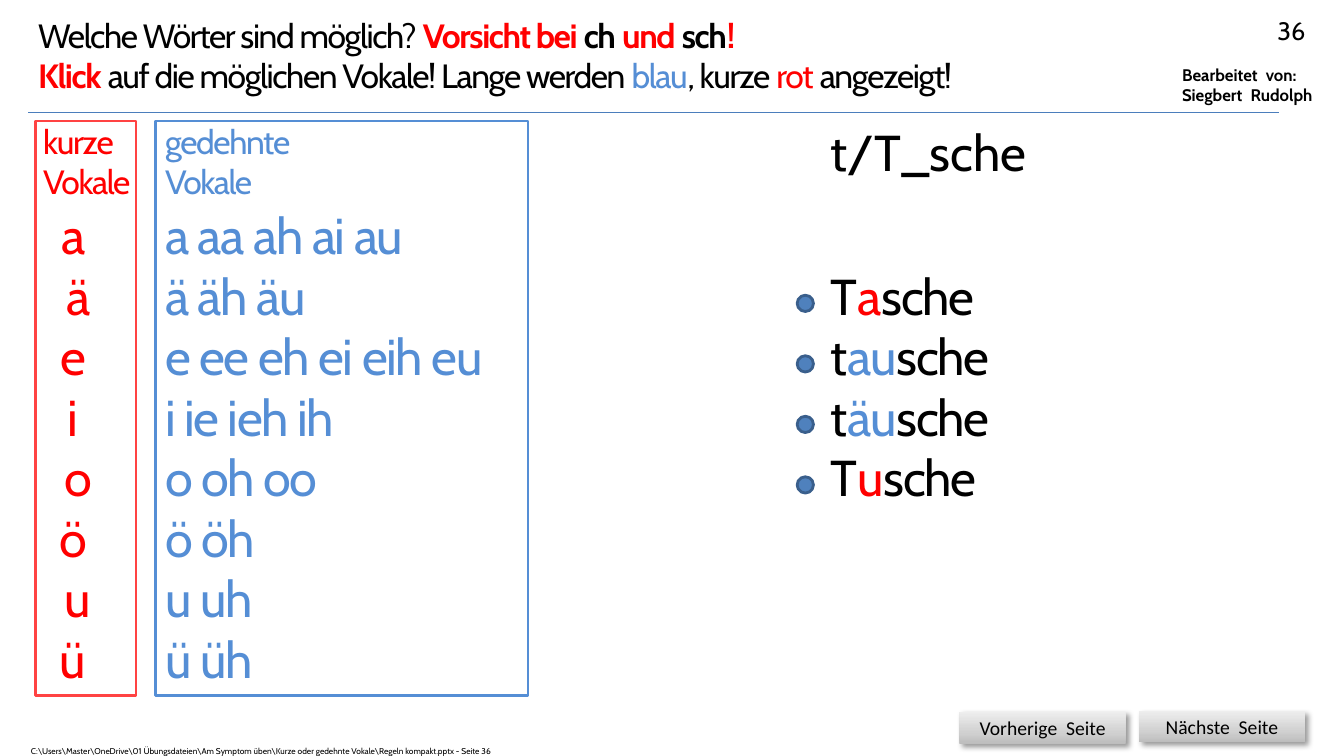
import lxml.etree
import pptx
import pptx.dml.color
import pptx.enum.shapes
import pptx.enum.text
import pptx.oxml.ns
import pptx.util

Cm = pptx.util.Cm
Pt = pptx.util.Pt
Align = pptx.enum.text.PP_ALIGN
Shape = pptx.enum.shapes.MSO_SHAPE

BLACK = "000000"
RED = "FF0000"
BLUE = "558ED5"
WIDE_SPACE = 3


def color(value):
    return pptx.dml.color.RGBColor.from_string(value)


def add_element(parent, tag, **attributes):
    element = lxml.etree.SubElement(parent, pptx.oxml.ns.qn(tag))
    for name, value in attributes.items():
        element.set(name, str(value))
    return element


def fill_paragraph(para, spans, size, align=Align.LEFT, tight=0, font="Cabin"):
    para.alignment = align
    for text, tint, bold, *spacing in spans:
        span = para.add_run()
        span.text = text
        span.font.name = font
        span.font.size = Pt(size)
        span.font.bold = bold
        span.font.color.rgb = color(tint)
        gap = spacing[0] if spacing else tight
        if gap:
            span.font._element.set("spc", str(gap * 100))


def add_text(page, left, top, width, height, lines, size, **style):
    box = page.shapes.add_textbox(Cm(left), Cm(top), Cm(width), Cm(height))
    frame = box.text_frame
    frame.word_wrap = True
    for index, spans in enumerate(lines):
        para = frame.add_paragraph() if index else frame.paragraphs[0]
        fill_paragraph(para, spans, size, **style)


def plain_lines(texts, tint):
    return [[(text, tint, False)] for text in texts]


def spaced_words(first, second, bold):
    return [(first, BLACK, bold), (" ", BLACK, bold, WIDE_SPACE), (second, BLACK, bold)]


def add_shape(page, kind, left, top, width, height, line=None, fill=None):
    shape = page.shapes.add_shape(kind, Cm(left), Cm(top), Cm(width), Cm(height))
    shape.shadow.inherit = False
    if fill:
        shape.fill.solid()
        shape.fill.fore_color.rgb = color(fill)
    else:
        shape.fill.background()
    if line:
        shape.line.color.rgb = color(line)
        shape.line.width = Pt(2)
    else:
        shape.line.fill.background()
    return shape


def add_button(page, left, top, width, height, first, second):
    button = add_shape(page, Shape.RECTANGLE, left, top, width, height)
    properties = button._element.spPr
    gradient = add_element(properties, "a:gradFill", rotWithShape=1)
    stops = add_element(gradient, "a:gsLst")
    for position, tint in ((0, "BDBDBD"), (35, "D1D1D1"), (100, "EEEEEE")):
        stop = add_element(stops, "a:gs", pos=position * 1000)
        add_element(stop, "a:srgbClr", val=tint)
    add_element(gradient, "a:lin", ang=270 * 60000, scaled=0)
    no_fill = properties.find(pptx.oxml.ns.qn("a:noFill"))
    properties.replace(no_fill, gradient)
    effects = properties.find(pptx.oxml.ns.qn("a:effectLst"))
    shadow = add_element(effects, "a:outerShdw", blurRad=Pt(4), dist=Pt(3),
                         dir=45 * 60000, rotWithShape=0)
    shadow_color = add_element(shadow, "a:srgbClr", val=BLACK)
    add_element(shadow_color, "a:alpha", val=40000)
    frame = button.text_frame
    frame.vertical_anchor = pptx.enum.text.MSO_ANCHOR.MIDDLE
    fill_paragraph(frame.paragraphs[0], spaced_words(first, second, False), 14,
                   align=Align.CENTER, font="Calibri")


def add_header(page, left, top, width):
    title = [
        [("Welche Wörter sind möglich? ", BLACK, False), ("Vorsicht bei ", RED, True),
         ("ch", BLACK, True), (" und ", RED, True), ("sch", BLACK, True),
         ("!", RED, True)],
        [("Klick ", RED, True),
         ("auf die möglichen Vokale! Lange werden ", BLACK, False),
         ("blau", BLUE, False), (", kurze ", BLACK, False), ("rot", RED, False),
         (" angezeigt!", BLACK, False)],
    ]
    add_text(page, left, top, 29.62, 2.31, title, 24, tight=-1)
    add_text(page, left + 24.82, top, 7.62, 1.02, plain_lines(["36"], BLACK), 18,
             align=Align.RIGHT)
    editor = [spaced_words("Bearbeitet", "von:", True),
              spaced_words("Siegbert", "Rudolph", True)]
    add_text(page, left + 28.83, top + 1.25, 4.06, 1.27, editor, 12)
    rule = page.shapes.add_connector(pptx.enum.shapes.MSO_CONNECTOR.STRAIGHT,
                                     Cm(left), Cm(top + 2.59),
                                     Cm(left + width), Cm(top + 2.59))
    rule.line.color.rgb = color("4B7EBC")
    rule.line.width = Pt(0.75)
    add_element(rule._element.spPr, "a:effectLst")


def add_short_vowels(page, left, top, width, height):
    add_text(page, left - 0.05, top - 0.13, 3.15, 2.31,
             plain_lines(["kurze", "Vokale"], RED), 24, tight=-1)
    letters = ["a ", "ä", "e ", "i ", "o", "ö ", "u", "ü "]
    add_text(page, left + 0.33, top + 1.98, 1.5, 12.57,
             plain_lines(letters, RED), 36, align=Align.CENTER, tight=-1)
    add_shape(page, Shape.RECTANGLE, left, top, width, height, line="FF4343")


def add_long_vowels(page, left, top, width, height):
    add_text(page, left, top - 0.13, 4.32, 2.31,
             plain_lines(["gedehnte", "Vokale"], BLUE), 24, tight=-1)
    spellings = ["a aa ah ai au", "ä äh äu", "e ee eh ei eih eu", "i ie ieh ih",
                 "o oh oo", "ö öh", "u uh", "ü üh"]
    add_text(page, left, top + 1.98, width + 0.5, 12.57,
             plain_lines(spellings, BLUE), 36, tight=-1)
    add_shape(page, Shape.RECTANGLE, left, top, width, height, line=BLUE)


def add_words(page, left, top, width):
    add_text(page, left, top, width, 1.8, plain_lines(["t/T_sche"], BLACK), 36)
    words = [("T", "a", RED), ("t", "au", BLUE), ("t", "äu", BLUE), ("T", "u", RED)]
    for row, (start, vowel, tint) in enumerate(words):
        word_top = top + 3.63 + row * 1.525
        spans = [(start, BLACK, False), (vowel, tint, False), ("sche", BLACK, False)]
        add_text(page, left, word_top, width, 1.8, [spans], 36, tight=-1)
        add_shape(page, Shape.OVAL, left - 0.59, word_top + 0.89, 0.41, 0.41,
                  line="3A5F8C", fill="4F81BD")


def add_footer(page, left, top):
    location = ("C:\\Users\\Master\\OneDrive\\01 Übungsdateien\\Am Symptom üben\\"
                "Kurze oder gedehnte Vokale\\Regeln kompakt.pptx - Seite 36")
    add_text(page, left, top + 0.74, 12.45, 0.51, plain_lines([location], BLACK), 6)
    add_button(page, left + 23.65, top, 4.19, 0.81, "Vorherige", "Seite")
    add_button(page, left + 28.17, top - 0.02, 4.19, 0.79, "Nächste", "Seite")


def main():
    deck = pptx.Presentation()
    deck.slide_width = Cm(33.87)
    deck.slide_height = Cm(19.05)
    page = deck.slides.add_slide(deck.slide_layouts[6])
    add_header(page, 0.71, 0.25, 31.52)
    add_short_vowels(page, 0.89, 3.05, 2.54, 14.48)
    add_long_vowels(page, 3.91, 3.05, 9.4, 14.48)
    add_words(page, 20.68, 2.92, 5.66)
    add_footer(page, 0.53, 17.93)
    deck.save("out.pptx")


if __name__ == "__main__":
    main()
